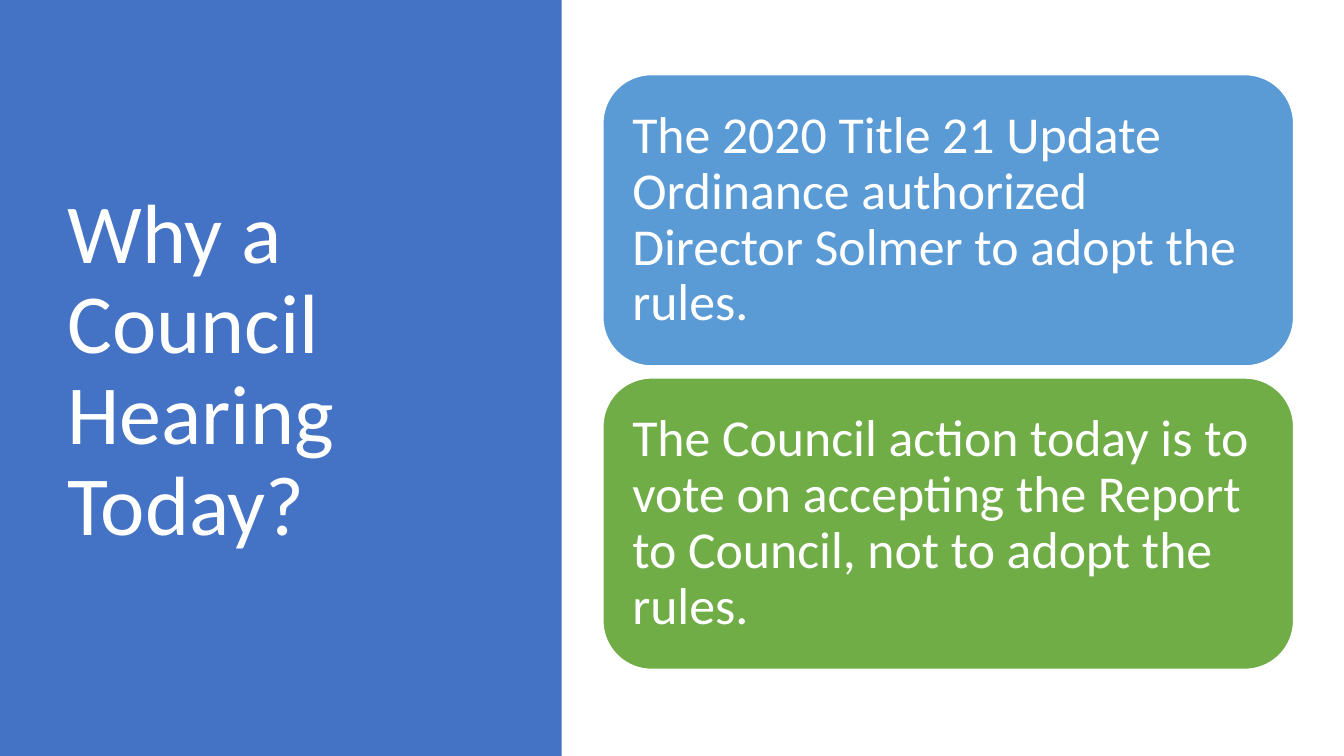
from typing import NamedTuple

from pptx import Presentation
from pptx.dml.color import RGBColor
from pptx.enum import shapes, text
from pptx.util import Inches, Pt

WIDTH, HEIGHT = 13.33, 7.5
WHITE = "FFFFFF"
CARD_LEFT, CARD_TOP = 5.98, 0.74
CARD_WIDTH, CARD_HEIGHT = 6.85, 2.89
CARD_PITCH = 3.01


class Card(NamedTuple):
    fill: str
    wording: str


CARDS = [
    Card("5B9BD5", "The 2020 Title 21 Update Ordinance authorized "
                   "Director Solmer to adopt the rules."),
    Card("70AD47", "The Council action today is to vote on accepting "
                   "the Report to Council, not to adopt the rules."),
]


def color(value: str) -> RGBColor:
    return RGBColor.from_string(value)


def add_block(slide, kind, left: float, top: float, width: float,
              height: float, fill: str, line: str = ""):
    sp = slide.shapes.add_shape(kind, Inches(left), Inches(top),
                                Inches(width), Inches(height))
    sp.shadow.inherit = False
    sp.fill.solid()
    sp.fill.fore_color.rgb = color(fill)
    if line:
        sp.line.color.rgb = color(line)
        sp.line.width = Pt(1)
    else:
        sp.line.fill.background()
    return sp


def write(sp, wording: str, *, size: float, inset_x: float,
          inset_y: float) -> None:
    tf = sp.text_frame
    tf.word_wrap = True
    tf.vertical_anchor = text.MSO_ANCHOR.MIDDLE
    tf.margin_left = tf.margin_right = Inches(inset_x)
    tf.margin_top = tf.margin_bottom = Inches(inset_y)
    p = tf.paragraphs[0]
    p.alignment = text.PP_ALIGN.LEFT
    p.line_spacing = 0.9
    r = p.add_run()
    r.text = wording
    r.font.name = "Calibri"
    r.font.size = Pt(size)
    r.font.color.rgb = color(WHITE)


def main() -> None:
    prs = Presentation()
    prs.slide_width, prs.slide_height = Inches(WIDTH), Inches(HEIGHT)
    s = prs.slides.add_slide(prs.slide_layouts[6])

    # Side panel with the title
    add_block(s, shapes.MSO_SHAPE.RECTANGLE, 0, 0, 5.57, HEIGHT, "4472C4")
    title = s.shapes.add_textbox(Inches(0.57), Inches(0.68),
                                 Inches(4.16), Inches(6.02))
    write(title, "Why a Council Hearing Today?", size=60,
          inset_x=0.1, inset_y=0.05)

    # Stacked cards
    for row, card in enumerate(CARDS):
        sp = add_block(s, shapes.MSO_SHAPE.ROUNDED_RECTANGLE, CARD_LEFT,
                       CARD_TOP + row * CARD_PITCH, CARD_WIDTH, CARD_HEIGHT,
                       card.fill, WHITE)
        write(sp, card.wording, size=37, inset_x=0.15, inset_y=0.15)

    prs.save("out.pptx")


if __name__ == "__main__":
    main()
